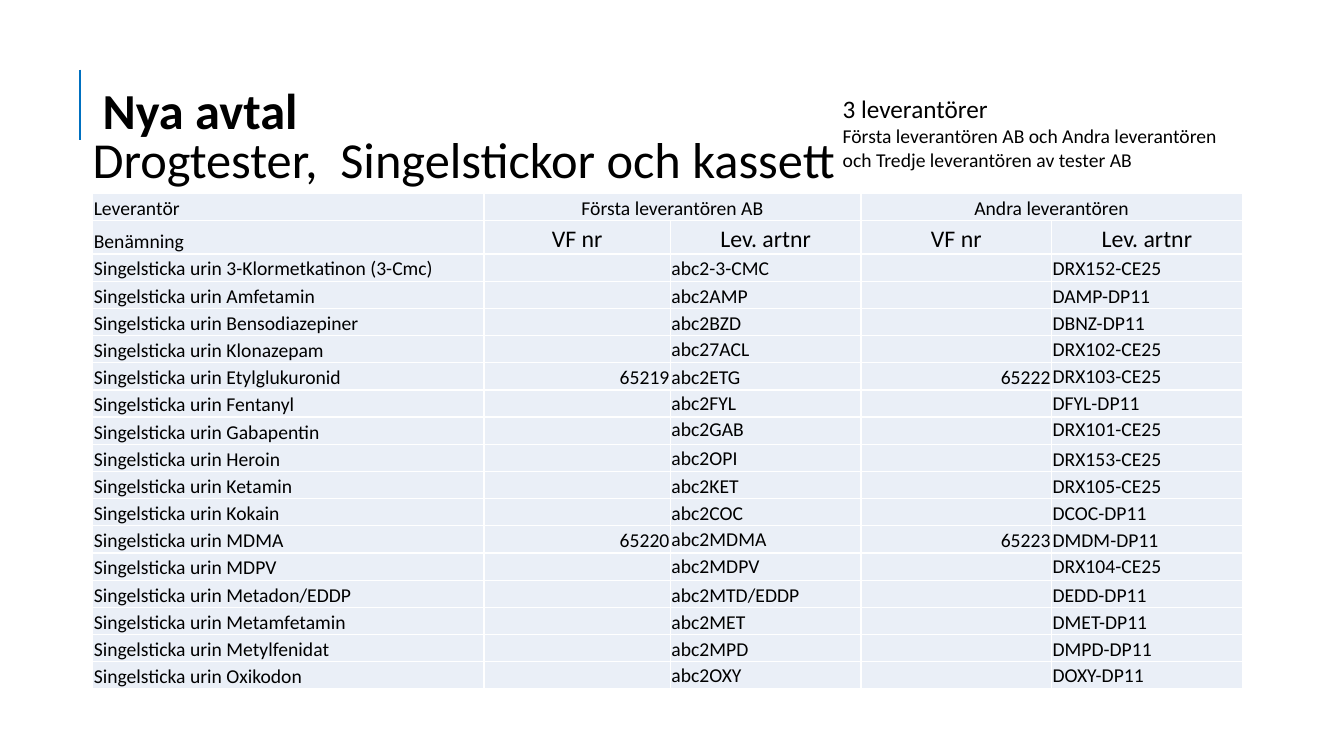
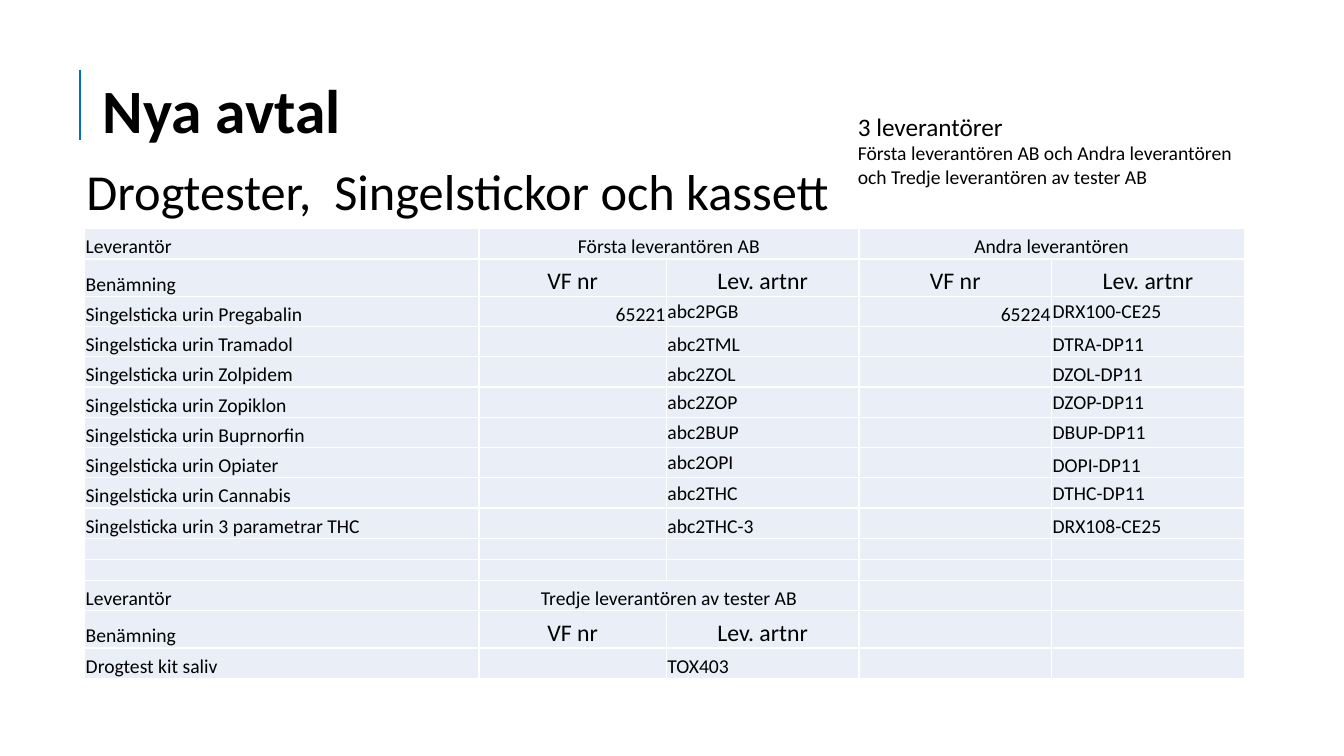
from lxml.etree import SubElement
from pptx import Presentation
from pptx.dml.color import RGBColor
from pptx.enum.shapes import MSO_CONNECTOR as Connector
from pptx.enum.text import MSO_ANCHOR as Anchor, PP_ALIGN as Align
from pptx.oxml import parse_xml
from pptx.oxml.ns import nsdecls, qn
from pptx.util import Inches, Pt

# Shared look
FONT = "Calibri"
COLORS = {"text": "000000", "accent": "0070C0", "cell": "EAEFF7", "border": "FFFFFF"}

# Shared wording
TITLE = "Nya avtal"
SUBTITLE = "Drogtester,  Singelstickor och kassett"
SUPPLIER_A = "Första leverantören AB"
SUPPLIER_B = "Andra leverantören"
SUPPLIER_C = "Tredje leverantören av tester AB"
SUPPLIER_COUNT = "3 leverantörer"
SUPPLIER_LIST = f"{SUPPLIER_A} och {SUPPLIER_B} och {SUPPLIER_C}"

# Table rows: name, then item number and article number for each supplier
SUPPLIER_LABEL, NAME_LABEL = "Leverantör", "Benämning"
NUMBER_LABELS = ("VF nr", "Lev. artnr")
EMPTY_ROW = ("",) * 5
MAIN_HEADER = [
    (SUPPLIER_LABEL, SUPPLIER_A, "", SUPPLIER_B, ""),
    (NAME_LABEL, *NUMBER_LABELS, *NUMBER_LABELS),
]
FIRST_ROWS = MAIN_HEADER + [
    ("Singelsticka urin 3-Klormetkatinon (3-Cmc)", "", "abc2-3-CMC", "", "DRX152-CE25"),
    ("Singelsticka urin Amfetamin", "", "abc2AMP", "", "DAMP-DP11"),
    ("Singelsticka urin Bensodiazepiner", "", "abc2BZD", "", "DBNZ-DP11"),
    ("Singelsticka urin Klonazepam", "", "abc27ACL", "", "DRX102-CE25"),
    ("Singelsticka urin Etylglukuronid", "65219", "abc2ETG", "65222", "DRX103-CE25"),
    ("Singelsticka urin Fentanyl", "", "abc2FYL", "", "DFYL-DP11"),
    ("Singelsticka urin Gabapentin", "", "abc2GAB", "", "DRX101-CE25"),
    ("Singelsticka urin Heroin", "", "abc2OPI", "", "DRX153-CE25"),
    ("Singelsticka urin Ketamin", "", "abc2KET", "", "DRX105-CE25"),
    ("Singelsticka urin Kokain", "", "abc2COC", "", "DCOC-DP11"),
    ("Singelsticka urin MDMA", "65220", "abc2MDMA", "65223", "DMDM-DP11"),
    ("Singelsticka urin MDPV", "", "abc2MDPV", "", "DRX104-CE25"),
    ("Singelsticka urin Metadon/EDDP", "", "abc2MTD/EDDP", "", "DEDD-DP11"),
    ("Singelsticka urin Metamfetamin", "", "abc2MET", "", "DMET-DP11"),
    ("Singelsticka urin Metylfenidat", "", "abc2MPD", "", "DMPD-DP11"),
    ("Singelsticka urin Oxikodon", "", "abc2OXY", "", "DOXY-DP11"),
]
SECOND_ROWS = MAIN_HEADER + [
    ("Singelsticka urin Pregabalin", "65221", "abc2PGB", "65224", "DRX100-CE25"),
    ("Singelsticka urin Tramadol", "", "abc2TML", "", "DTRA-DP11"),
    ("Singelsticka urin Zolpidem", "", "abc2ZOL", "", "DZOL-DP11"),
    ("Singelsticka urin Zopiklon", "", "abc2ZOP", "", "DZOP-DP11"),
    ("Singelsticka urin Buprnorfin", "", "abc2BUP", "", "DBUP-DP11"),
    ("Singelsticka urin Opiater", "", "abc2OPI", "", "DOPI-DP11"),
    ("Singelsticka urin Cannabis", "", "abc2THC", "", "DTHC-DP11"),
    ("Singelsticka urin 3 parametrar THC", "", "abc2THC-3", "", "DRX108-CE25"),
    EMPTY_ROW,
    EMPTY_ROW,
    (SUPPLIER_LABEL, SUPPLIER_C, "", "", ""),
    (NAME_LABEL, *NUMBER_LABELS, "", ""),
    ("Drogtest kit saliv", "", "TOX403", "", ""),
]

# Article numbers that do not sit at the bottom of their cell
ANCHORS = {"abc2GAB": Anchor.TOP, "DRX101-CE25": Anchor.TOP} | dict.fromkeys(
    ("abc27ACL", "DRX102-CE25", "DRX103-CE25", "abc2FYL", "DFYL-DP11", "abc2MDMA",
     "abc2MDPV", "DRX104-CE25", "abc2OXY", "DOXY-DP11", "abc2PGB", "DRX100-CE25",
     "abc2ZOP", "DZOP-DP11", "abc2BUP", "DBUP-DP11", "abc2OPI", "abc2THC",
     "DTHC-DP11"), Anchor.MIDDLE)


def color(name):
    return RGBColor.from_string(COLORS[name])


def style_paragraph(paragraph, size, bold=False):
    font = paragraph.font
    font.name, font.size, font.bold = FONT, Pt(size), bold
    font.color.rgb = color("text")


def add_text(slide, box, lines, anchor=Anchor.TOP, bold=False, spacing=1.0):
    """Add a text box; lines holds (text, size) pairs."""
    frame = slide.shapes.add_textbox(*map(Inches, box)).text_frame
    frame.word_wrap = True
    frame.vertical_anchor = anchor
    for index, (text, size) in enumerate(lines):
        paragraph = frame.add_paragraph() if index else frame.paragraphs[0]
        paragraph.text = text
        paragraph.line_spacing = spacing
        style_paragraph(paragraph, size, bold)


def add_accent_line(slide):
    x = Inches(0.79)
    line = slide.shapes.add_connector(Connector.STRAIGHT, x, Inches(0.69), x, Inches(1.39))
    line.line.color.rgb = color("accent")
    line.line.width = Pt(1.5)
    SubElement(line._element.spPr, qn("a:effectLst"))


def set_borders(cell):
    properties = cell._tc.get_or_add_tcPr()
    for index, side in enumerate(("lnL", "lnR", "lnT", "lnB")):
        properties.insert(index, parse_xml(
            f'<a:{side} {nsdecls("a")} w="{Pt(1)}"><a:solidFill>'
            f'<a:srgbClr val="{COLORS["border"]}"/></a:solidFill></a:{side}>'))


def fill_cell(cell, text, size, align):
    cell.margin_left = cell.margin_right = cell.margin_top = Inches(0.01)
    cell.margin_bottom = 0
    cell.vertical_anchor = ANCHORS.get(text, Anchor.BOTTOM)
    cell.fill.solid()
    cell.fill.fore_color.rgb = color("cell")
    set_borders(cell)
    paragraph = cell.text_frame.paragraphs[0]
    if text:
        paragraph.text = text
        paragraph.alignment = align
        style_paragraph(paragraph, size)
    else:
        # A small paragraph mark keeps empty rows low
        SubElement(paragraph._p, qn("a:endParaRPr"), sz="800")


def cell_align(row_label, column):
    if column == 0:
        return Align.LEFT
    if row_label in (SUPPLIER_LABEL, NAME_LABEL):
        return Align.CENTER
    return Align.RIGHT if column in (1, 3) else Align.LEFT


def add_supplier_table(slide, left, top, widths, rows, row_height, label_height):
    heights = [label_height if row[0] == NAME_LABEL else row_height if row[0] else 0.21
               for row in rows]
    box = (left, top, sum(widths), sum(heights))
    table = slide.shapes.add_table(len(rows), len(widths), *map(Inches, box)).table
    table.first_row = table.horz_banding = False
    for column, width in zip(table.columns, widths):
        column.width = Inches(width)
    for r, (values, height) in enumerate(zip(rows, heights)):
        table.rows[r].height = Inches(height)
        label = values[0]
        for c, text in enumerate(values):
            size = 17 if label == NAME_LABEL and c else 14
            fill_cell(table.cell(r, c), text, size, cell_align(label, c))
        if label == SUPPLIER_LABEL:
            for c in (1, 3):
                if values[c]:
                    table.cell(r, c).merge(table.cell(r, c + 1))


def add_agreement_slide(presentation, title_size, note_at, subtitle_at, table_layout):
    slide = presentation.slides.add_slide(presentation.slide_layouts[6])
    add_accent_line(slide)
    add_text(slide, (0.92, 0.4, 11.5, 1.45), [(TITLE, title_size)],
             Anchor.MIDDLE, bold=True, spacing=0.9)
    add_supplier_table(slide, **table_layout)
    add_text(slide, (*note_at, 3.93, 0.88), [(SUPPLIER_COUNT, 18), (SUPPLIER_LIST, 14)])
    add_text(slide, (*subtitle_at, 11.5, 1.45), [(SUBTITLE, 36)],
             Anchor.MIDDLE, spacing=0.9)


def main():
    presentation = Presentation()
    presentation.slide_width, presentation.slide_height = Inches(13.33), Inches(7.5)
    # Slide 1: first part of the list
    add_agreement_slide(
        presentation, 36, (8.26, 0.88), (0.82, 0.88),
        dict(left=0.92, top=1.92, widths=[3.88, 1.85] + [1.89] * 3,
             rows=FIRST_ROWS, row_height=0.27, label_height=0.33))
    # Slide 2: the rest and the third supplier
    add_agreement_slide(
        presentation, 44, (8.41, 1.05), (0.76, 1.2),
        dict(left=0.84, top=2.27, widths=[3.91, 1.86] + [1.91] * 3,
             rows=SECOND_ROWS, row_height=0.3, label_height=0.37))
    presentation.save("out.pptx")


if __name__ == "__main__":
    main()
